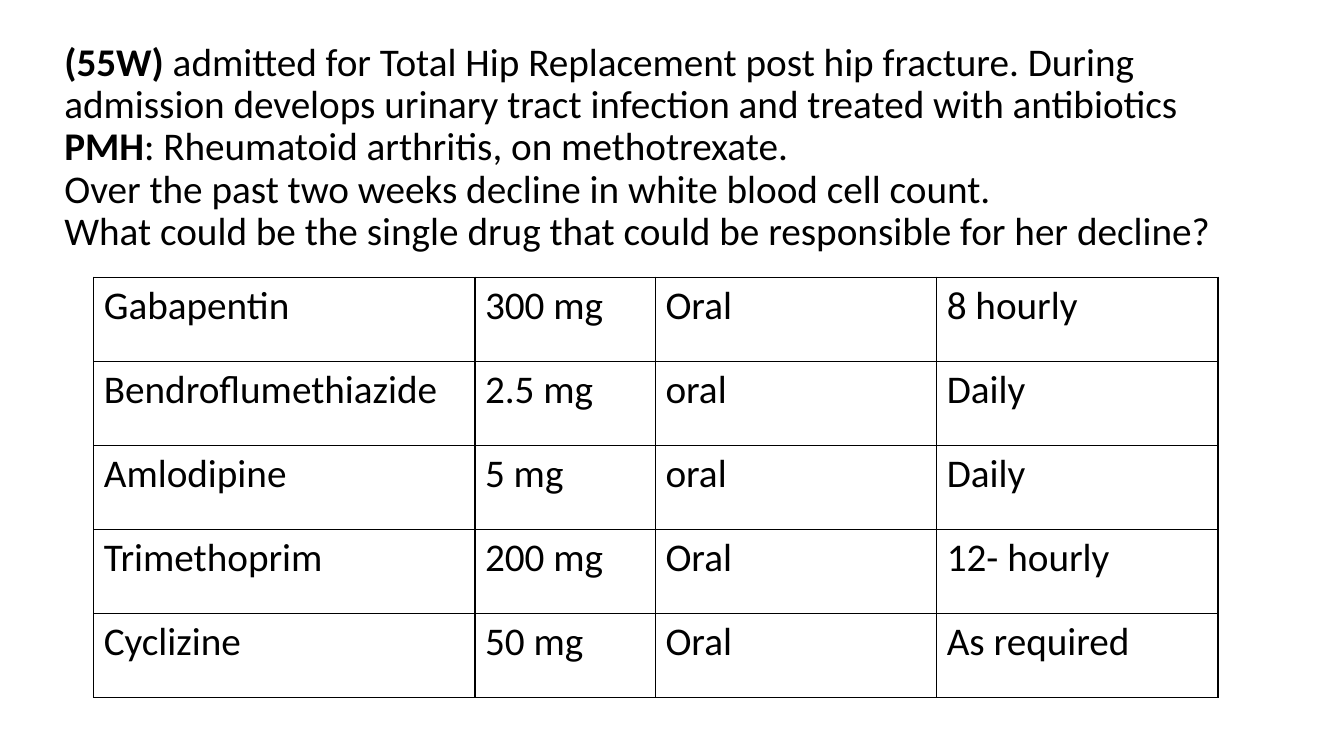
"""Build a case slide: a patient history above a table of prescribed drugs."""
from dataclasses import astuple, dataclass

import lxml.etree
import pptx
import pptx.dml.color
import pptx.enum.text
import pptx.oxml.ns
import pptx.slide
import pptx.table
import pptx.text.text
import pptx.util

COLOURS = {"ink": "000000", "paper": "FFFFFF"}
SLIDE_WIDTH = pptx.util.Inches(13.33)
SLIDE_HEIGHT = pptx.util.Inches(7.5)
DRUG_COLUMN_PERCENTS = (28.36, 13.43, 20.93, 20.93)
DRUG_ROW_PERCENT = 11.11


@dataclass(frozen=True)
class Area:
    """A rectangle in percent of the slide's width and height."""
    left: float
    top: float
    width: float
    height: float


@dataclass(frozen=True)
class Drug:
    """One prescribed drug."""
    name: str
    dose: str
    route: str
    frequency: str


@dataclass(frozen=True)
class HistoryLine:
    """A line of the history with a bold lead."""
    lead: str
    detail: str


HISTORY_AREA = Area(4.05, 2.53, 89.57, 34.13)
DRUGS_AREA = Area(6.98, 36.67, sum(DRUG_COLUMN_PERCENTS), 5 * DRUG_ROW_PERCENT)

HISTORY = (
    HistoryLine("(55W)", " admitted for Total Hip Replacement post hip fracture. During admission "
                "develops urinary tract infection and treated with antibiotics "),
    HistoryLine("PMH", ": Rheumatoid arthritis, on methotrexate."),
    HistoryLine("", "Over the past two weeks decline in white blood cell count."),
    HistoryLine("", "What could be the single drug that could be responsible for her decline?"),
)
DRUGS = (
    Drug("Gabapentin", "300 mg", "Oral", "8 hourly"),
    Drug("Bendroflumethiazide", "2.5 mg", "oral", "Daily"),
    Drug("Amlodipine", "5 mg", "oral", "Daily"),
    Drug("Trimethoprim", "200 mg", "Oral", "12- hourly"),
    Drug("Cyclizine", "50 mg", "Oral", "As required"),
)


def across(percent: float) -> int:
    """Turn a share of the slide's width into a length."""
    return round(SLIDE_WIDTH * percent / 100)


def down(percent: float) -> int:
    """Turn a share of the slide's height into a length."""
    return round(SLIDE_HEIGHT * percent / 100)


def place(area: Area) -> tuple[int, int, int, int]:
    """Return left, top, width and height as lengths."""
    return across(area.left), down(area.top), across(area.width), down(area.height)


def colour(name: str) -> pptx.dml.color.RGBColor:
    """Look up a named colour."""
    return pptx.dml.color.RGBColor.from_string(COLOURS[name])


def set_font(paragraph: pptx.text.text._Paragraph) -> None:
    """Give a paragraph the slide's font."""
    paragraph.font.name = "Calibri"
    paragraph.font.size = pptx.util.Pt(28)
    paragraph.font.color.rgb = colour("ink")


def draw_history(slide: pptx.slide.Slide) -> None:
    """Write the patient history."""
    history = slide.shapes.add_textbox(*place(HISTORY_AREA)).text_frame
    history.word_wrap = True
    history.vertical_anchor = pptx.enum.text.MSO_ANCHOR.MIDDLE
    story = history.paragraphs[0]
    story.line_spacing = 0.9
    set_font(story)
    for index, line in enumerate(HISTORY):
        if index:
            story.add_line_break()
        if line.lead:
            lead = story.add_run()
            lead.text = line.lead
            lead.font.bold = True
        story.add_run().text = line.detail


def draw_borders(cell: pptx.table._Cell) -> None:
    """Outline a cell on all four sides."""
    qn = pptx.oxml.ns.qn
    properties = cell._tc.get_or_add_tcPr()
    for side in ("a:lnL", "a:lnR", "a:lnT", "a:lnB"):
        border = lxml.etree.SubElement(properties, qn(side), w=str(pptx.util.Pt(1)))
        fill = lxml.etree.SubElement(border, qn("a:solidFill"))
        lxml.etree.SubElement(fill, qn("a:srgbClr"), val=COLOURS["ink"])


def draw_drugs(slide: pptx.slide.Slide) -> None:
    """Draw the table of drugs."""
    chart = slide.shapes.add_table(
        len(DRUGS), len(DRUG_COLUMN_PERCENTS), *place(DRUGS_AREA)).table
    chart.first_row = False
    chart.horz_banding = False
    for column, percent in zip(chart.columns, DRUG_COLUMN_PERCENTS):
        column.width = across(percent)
    for row, drug in zip(chart.rows, DRUGS):
        row.height = down(DRUG_ROW_PERCENT)
        for cell, entry in zip(row.cells, astuple(drug)):
            cell.text = entry
            set_font(cell.text_frame.paragraphs[0])
            draw_borders(cell)
            cell.fill.solid()
            cell.fill.fore_color.rgb = colour("paper")


def main() -> None:
    """Build and save the slide."""
    deck = pptx.Presentation()
    deck.slide_width = SLIDE_WIDTH
    deck.slide_height = SLIDE_HEIGHT
    case = deck.slides.add_slide(deck.slide_layouts[6])
    draw_history(case)
    draw_drugs(case)
    deck.save("out.pptx")


if __name__ == "__main__":
    main()
